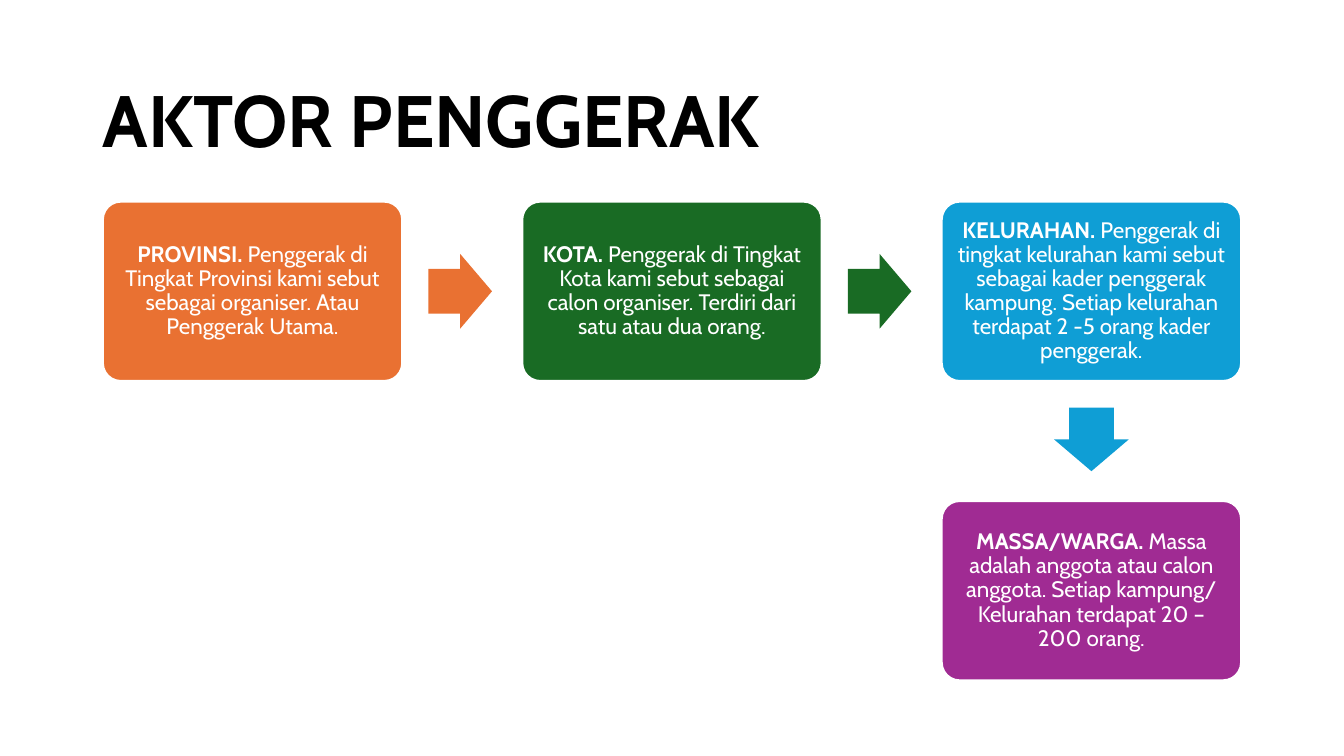
from pptx import Presentation
from pptx.dml.color import RGBColor
from pptx.enum import shapes, text
from pptx.util import Pt

EMU_PER_PX = 9144
FONT = "Cabin"
COLORS = {
    "orange": "E97132",
    "green": "196B24",
    "blue": "0F9ED5",
    "purple": "A02B93",
    "black": "000000",
    "white": "FFFFFF",
}
CARD_WIDTH, CARD_HEIGHT = 297, 178
ARROW_WIDTH, ARROW_HEIGHT = 63, 74
LEFT, TOP = 102, 200
COLUMN_STEP, ROW_STEP = 416, 297
ACTORS = [
    (0, 0, "orange", "right", "PROVINSI. ",
     "Penggerak di Tingkat Provinsi kami sebut sebagai organiser. Atau Penggerak Utama."),
    (1, 0, "green", "right", "KOTA. ",
     "Penggerak di Tingkat Kota kami sebut sebagai calon organiser. "
     "Terdiri dari satu atau dua orang."),
    (2, 0, "blue", "down", "KELURAHAN. ",
     "Penggerak di tingkat kelurahan kami sebut sebagai kader penggerak kampung. "
     "Setiap kelurahan terdapat 2 -5 orang kader penggerak."),
    (2, 1, "purple", None, "MASSA/WARGA. ",
     "Massa adalah anggota atau calon anggota. "
     "Setiap kampung/ Kelurahan terdapat 20 – 200 orang."),
]


def px(value):
    return round(value * EMU_PER_PX)


def color(name):
    return RGBColor.from_string(COLORS[name])


def add_run(paragraph, content, size, color_name, bold):
    run = paragraph.add_run()
    run.text = content
    run.font.name = FONT
    run.font.size = Pt(size)
    run.font.bold = bold
    run.font.color.rgb = color(color_name)


def prepare_paragraph(frame):
    frame.word_wrap = True
    frame.vertical_anchor = text.MSO_ANCHOR.MIDDLE
    paragraph = frame.paragraphs[0]
    paragraph.line_spacing = 0.9
    return paragraph


def add_title(slide, content):
    box = slide.shapes.add_textbox(px(92), px(61), px(1150), px(124))
    paragraph = prepare_paragraph(box.text_frame)
    add_run(paragraph, content, 52, "black", True)


def add_filled_shape(slide, kind, left, top, width, height, fill, adjustments):
    shape = slide.shapes.add_shape(kind, px(left), px(top), px(width), px(height))
    shape.shadow.inherit = False
    shape.fill.solid()
    shape.fill.fore_color.rgb = color(fill)
    shape.line.fill.background()
    for index, adjustment in enumerate(adjustments):
        shape.adjustments[index] = adjustment
    return shape


def add_card(slide, left, top, fill, heading, body):
    card = add_filled_shape(slide, shapes.MSO_SHAPE.ROUNDED_RECTANGLE, left, top,
                            CARD_WIDTH, CARD_HEIGHT, fill, [0.1])
    card.line.color.rgb = color("white")
    card.line.width = Pt(1.5)
    frame = card.text_frame
    frame.margin_left = frame.margin_right = px(7)
    frame.margin_top = frame.margin_bottom = px(7)
    paragraph = prepare_paragraph(frame)
    paragraph.alignment = text.PP_ALIGN.CENTER
    add_run(paragraph, heading, 16, "white", True)
    add_run(paragraph, body, 16, "white", False)


def add_arrow(slide, card_left, card_top, fill, direction):
    if direction == "right":
        left, top = card_left + 323, card_top + (CARD_HEIGHT - ARROW_HEIGHT) // 2
    else:
        left, top = card_left + (CARD_WIDTH - ARROW_WIDTH) // 2, card_top + 199
    arrow = add_filled_shape(slide, shapes.MSO_SHAPE.RIGHT_ARROW, left, top,
                             ARROW_WIDTH, ARROW_HEIGHT, fill, [0.6, 0.5])
    arrow.rotation = 0 if direction == "right" else 90


def main():
    presentation = Presentation()
    presentation.slide_width, presentation.slide_height = px(1333), px(750)
    slide = presentation.slides.add_slide(presentation.slide_layouts[6])
    add_title(slide, "AKTOR PENGGERAK")
    for column, row, fill, direction, heading, body in ACTORS:
        left, top = LEFT + column * COLUMN_STEP, TOP + row * ROW_STEP
        add_card(slide, left, top, fill, heading, body)
        if direction:
            add_arrow(slide, left, top, fill, direction)
    presentation.save("out.pptx")


if __name__ == "__main__":
    main()
